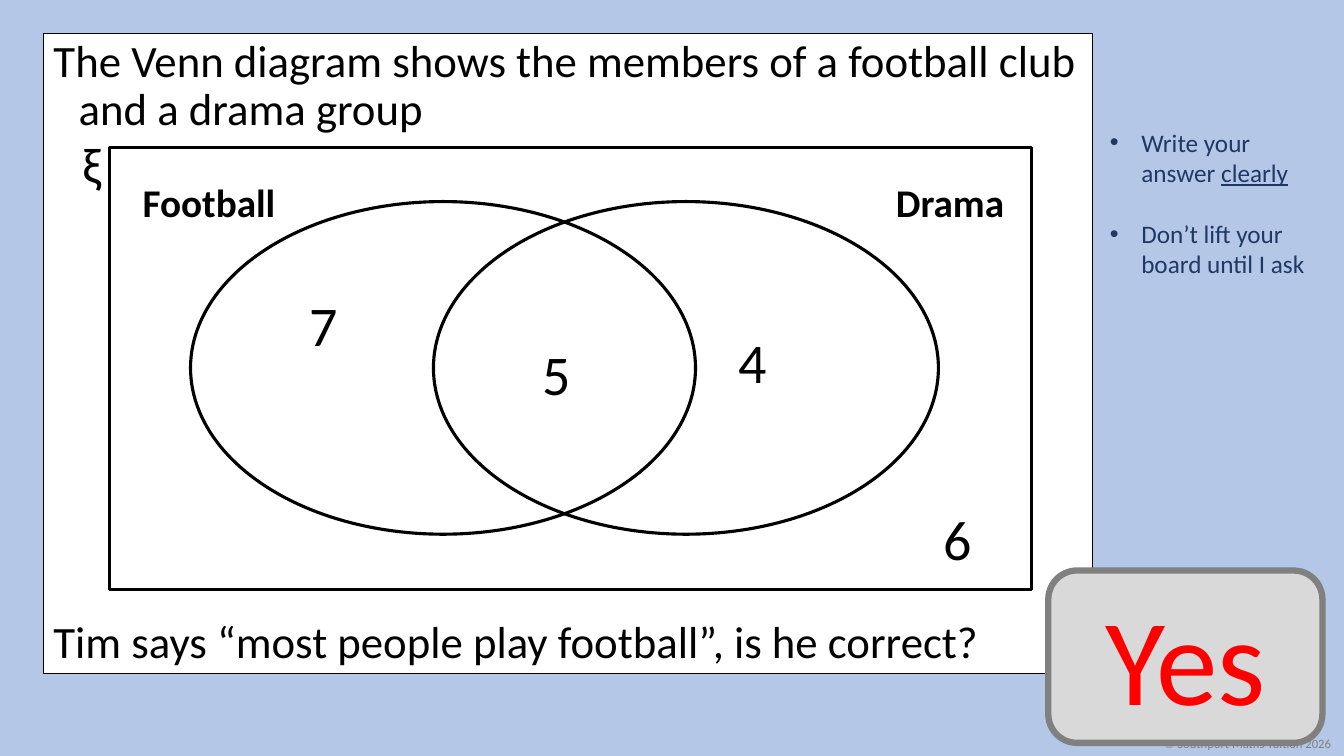
from dataclasses import dataclass

from lxml import etree
from pptx import Presentation
from pptx.dml.color import RGBColor
from pptx.enum.shapes import MSO_SHAPE
from pptx.enum.text import MSO_ANCHOR, MSO_AUTO_SIZE, PP_ALIGN
from pptx.oxml.ns import qn
from pptx.util import Pt

RECTANGLE, ROUNDED, OVAL = MSO_SHAPE.RECTANGLE, MSO_SHAPE.ROUNDED_RECTANGLE, MSO_SHAPE.OVAL
LEFT, CENTER, RIGHT = PP_ALIGN.LEFT, PP_ALIGN.CENTER, PP_ALIGN.RIGHT
TOP, MIDDLE, BOTTOM = MSO_ANCHOR.TOP, MSO_ANCHOR.MIDDLE, MSO_ANCHOR.BOTTOM
NO_FIT, GROW = MSO_AUTO_SIZE.NONE, MSO_AUTO_SIZE.SHAPE_TO_FIT_TEXT
TITLE_AND_CONTENT = 1


@dataclass(frozen=True)
class Theme:
    font: str = "Calibri"
    background: str = "B4C7E7"
    paper: str = "FFFFFF"
    ink: str = "000000"
    tip: str = "203864"
    grey: str = "808080"
    answer_fill: str = "D9D9D9"
    answer: str = "FF0000"
    question_size: int = 32
    tip_size: int = 18
    footer_size: int = 9
    set_size: int = 28
    universal_size: int = 36
    count_size: int = 40
    answer_size: int = 88


@dataclass(frozen=True)
class Area:
    left: float
    top: float
    width: float
    height: float

    def lengths(self):
        return Pt(self.left), Pt(self.top), Pt(self.width), Pt(self.height)


@dataclass(frozen=True)
class Label:
    text: str
    area: Area
    size: int
    align: PP_ALIGN = CENTER
    bold: bool = False
    color: str = Theme.ink
    wrap: bool = False


THEME = Theme()
PANEL = Area(31, 23.8, 749.5, 457.2)
TIPS = Area(785.5, 87.1, 167, 116.6)
UNIVERSE = Area(78.5, 105.1, 658.1, 316.1)
SETS = [Area(left, 144, 360.7, 237.6) for left in (136.1, 309.6)]
ANSWER = Area(748.8, 407.5, 195.8, 123.1)


def count_label(text: str, left: float, top: float) -> Label:
    return Label(text, Area(left, top, 35.3, 55.4), THEME.count_size)


FOOTER = Label("© Southport Maths Tuition 2026", Area(824.4, 522, 135.4, 18),
               THEME.footer_size, LEFT, color=THEME.grey)
LABELS = [
    Label("Football", Area(93.6, 123.8, 110.2, 41), THEME.set_size, RIGHT, True),
    Label("Drama", Area(631.4, 123.8, 92.9, 41), THEME.set_size, RIGHT, True),
    Label("ξ", Area(51.8, 91.4, 41, 51.1), THEME.universal_size, LEFT, wrap=True),
    count_label("7", 213.8, 203.8),
    count_label("5", 380.2, 239),
    count_label("4", 519.8, 230.4),
    count_label("6", 666.7, 357.1),
]


def place(shape, area: Area) -> None:
    shape.left, shape.top, shape.width, shape.height = area.lengths()


def format_runs(para, size: int, color: str, bold: bool = False) -> None:
    for span in para.runs:
        span.font.name = THEME.font
        span.font.size = Pt(size)
        span.font.bold = bold
        span.font.color.rgb = RGBColor.from_string(color)


def hang(para, indent: float, bullet: str = "") -> None:
    """Give a hanging indent, with or without a bullet."""
    properties = para._p.get_or_add_pPr()
    properties.set("marL", str(Pt(indent)))
    properties.set("indent", str(-Pt(indent)))
    if bullet:
        etree.SubElement(properties, qn("a:buFont")).set("typeface", "Arial")
        etree.SubElement(properties, qn("a:buChar")).set("char", bullet)
    else:
        etree.SubElement(properties, qn("a:buNone"))


def outline(shape, color: str, width: float, fill: str = "") -> None:
    shape.shadow.inherit = False
    shape.line.color.rgb = RGBColor.from_string(color)
    shape.line.width = Pt(width)
    if fill:
        shape.fill.solid()
        shape.fill.fore_color.rgb = RGBColor.from_string(fill)
    else:
        shape.fill.background()


def write_question(shape, text: str, anchor: MSO_ANCHOR) -> None:
    place(shape, PANEL)
    frame = shape.text_frame
    frame.text = text
    frame.word_wrap = True
    frame.auto_size = NO_FIT
    frame.vertical_anchor = anchor
    para = frame.paragraphs[0]
    hang(para, 18)
    para.alignment = LEFT
    para.line_spacing = 0.9
    para.space_before = Pt(0)
    format_runs(para, THEME.question_size, THEME.ink)


def write_tips(shape) -> None:
    place(shape, TIPS)
    frame = shape.text_frame
    frame.text = "Write your answer \nDon’t lift your board until I ask"
    frame.auto_size = NO_FIT
    first, second = frame.paragraphs
    keyword = first.add_run()
    keyword.text = "clearly"
    keyword.font.underline = True
    for para, gap in ((first, 0), (second, 22)):
        hang(para, 22.5, "•")
        para.space_before = Pt(gap)
        format_runs(para, THEME.tip_size, THEME.tip)


def add_label(page, label: Label) -> None:
    box = page.shapes.add_textbox(*label.area.lengths())
    frame = box.text_frame
    frame.text = label.text
    frame.word_wrap = label.wrap
    frame.auto_size = GROW
    para = frame.paragraphs[0]
    para.alignment = label.align
    format_runs(para, label.size, label.color, label.bold)


def add_venn(page) -> None:
    venn = page.shapes.add_group_shape()
    for kind, area in [(OVAL, area) for area in SETS] + [(RECTANGLE, UNIVERSE)]:
        outline(venn.shapes.add_shape(kind, *area.lengths()), THEME.ink, 2.25)


def add_answer(page) -> None:
    button = page.shapes.add_shape(ROUNDED, *ANSWER.lengths())
    outline(button, THEME.grey, 4.5, THEME.answer_fill)
    frame = button.text_frame
    frame.text = "Yes"
    frame.vertical_anchor = MIDDLE
    frame.paragraphs[0].alignment = CENTER
    format_runs(frame.paragraphs[0], THEME.answer_size, THEME.answer)


def main() -> None:
    deck = Presentation()
    deck.slide_width, deck.slide_height = Pt(960), Pt(540)
    page = deck.slides.add_slide(deck.slide_layouts[TITLE_AND_CONTENT])
    page.background.fill.solid()
    page.background.fill.fore_color.rgb = RGBColor.from_string(THEME.background)

    # Question panel and side tips
    question = page.shapes.title
    write_question(question, "The Venn diagram shows the members of a football club "
                   "and a drama group", TOP)
    question.fill.solid()
    question.fill.fore_color.rgb = RGBColor.from_string(THEME.paper)
    question.line.color.rgb = RGBColor.from_string(THEME.ink)
    question.line.width = Pt(1)
    write_tips(page.placeholders[1])
    add_label(page, FOOTER)

    # Venn diagram
    add_venn(page)
    for label in LABELS:
        add_label(page, label)

    # Claim and answer
    claim = page.shapes.add_textbox(*PANEL.lengths())
    write_question(claim, "Tim says “most people play football”, is he correct?", BOTTOM)
    add_answer(page)
    deck.save("out.pptx")


if __name__ == "__main__":
    main()
